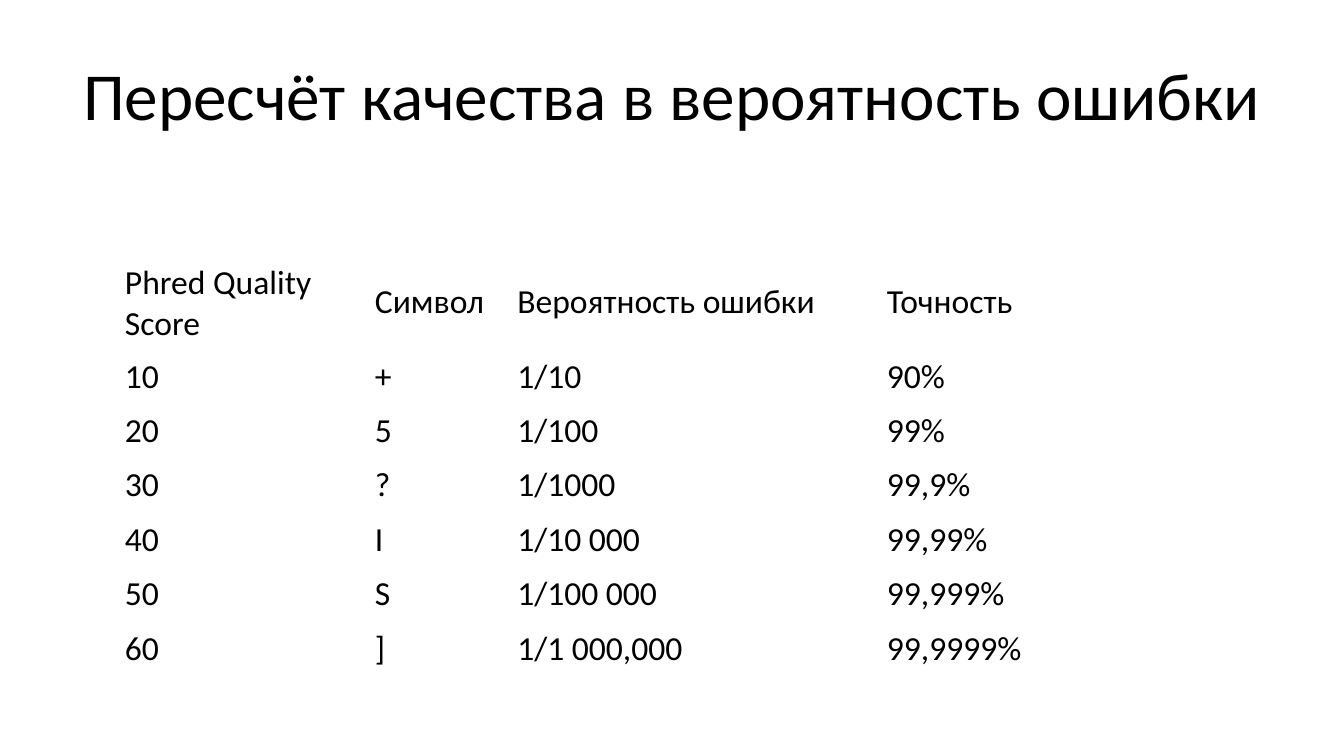
from pptx import Presentation
from pptx.dml.color import RGBColor
from pptx.enum.text import MSO_ANCHOR, PP_ALIGN
from pptx.util import Inches, Pt

COLORS = {"text": "000000", "background": "FFFFFF"}
FONT = "Calibri"
COLUMN_WIDTHS = [1.86, 1.06, 2.75, 1.75]
TABLE_HEIGHT = 3.1
HEADER_HEIGHT = 0.67
ROWS = [
    ("Phred Quality Score", "Символ", "Вероятность ошибки", "Точность"),
    ("10", "+", "1/10", "90%"),
    ("20", "5", "1/100", "99%"),
    ("30", "?", "1/1000", "99,9%"),
    ("40", "I", "1/10 000", "99,99%"),
    ("50", "S", "1/100 000", "99,999%"),
    ("60", "]", "1/1 000,000", "99,9999%"),
]
BODY_ROWS = len(ROWS) - 1
ROW_HEIGHTS = [HEADER_HEIGHT] + [(TABLE_HEIGHT - HEADER_HEIGHT) / BODY_ROWS] * BODY_ROWS


def write(frame, text, size, alignment):
    paragraph = frame.paragraphs[0]
    paragraph.text = text
    paragraph.alignment = alignment
    paragraph.font.name = FONT
    paragraph.font.size = Pt(size)
    paragraph.font.color.rgb = RGBColor.from_string(COLORS["text"])


deck = Presentation()
deck.slide_width = Inches(10)
deck.slide_height = deck.slide_width * 9 // 16
page = deck.slides.add_slide(deck.slide_layouts[6])
page.background.fill.solid()
page.background.fill.fore_color.rgb = RGBColor.from_string(COLORS["background"])

title = page.shapes.add_textbox(Inches(0.5), Inches(0.23), Inches(9), Inches(0.94))
title.text_frame.word_wrap = True
title.text_frame.vertical_anchor = MSO_ANCHOR.MIDDLE
write(title.text_frame, "Пересчёт качества в вероятность ошибки", 36, PP_ALIGN.CENTER)

table = page.shapes.add_table(
    len(ROWS), len(COLUMN_WIDTHS), Inches(0.83), Inches(1.9),
    Inches(sum(COLUMN_WIDTHS)), Inches(TABLE_HEIGHT),
).table
table.first_row = table.horz_banding = False
for column, width in zip(table.columns, COLUMN_WIDTHS):
    column.width = Inches(width)
for row, height, texts in zip(table.rows, ROW_HEIGHTS, ROWS):
    row.height = Inches(height)
    for cell, text in zip(row.cells, texts):
        cell.fill.background()
        cell.vertical_anchor = MSO_ANCHOR.MIDDLE
        write(cell.text_frame, text, 18, PP_ALIGN.LEFT)

deck.save("out.pptx")
